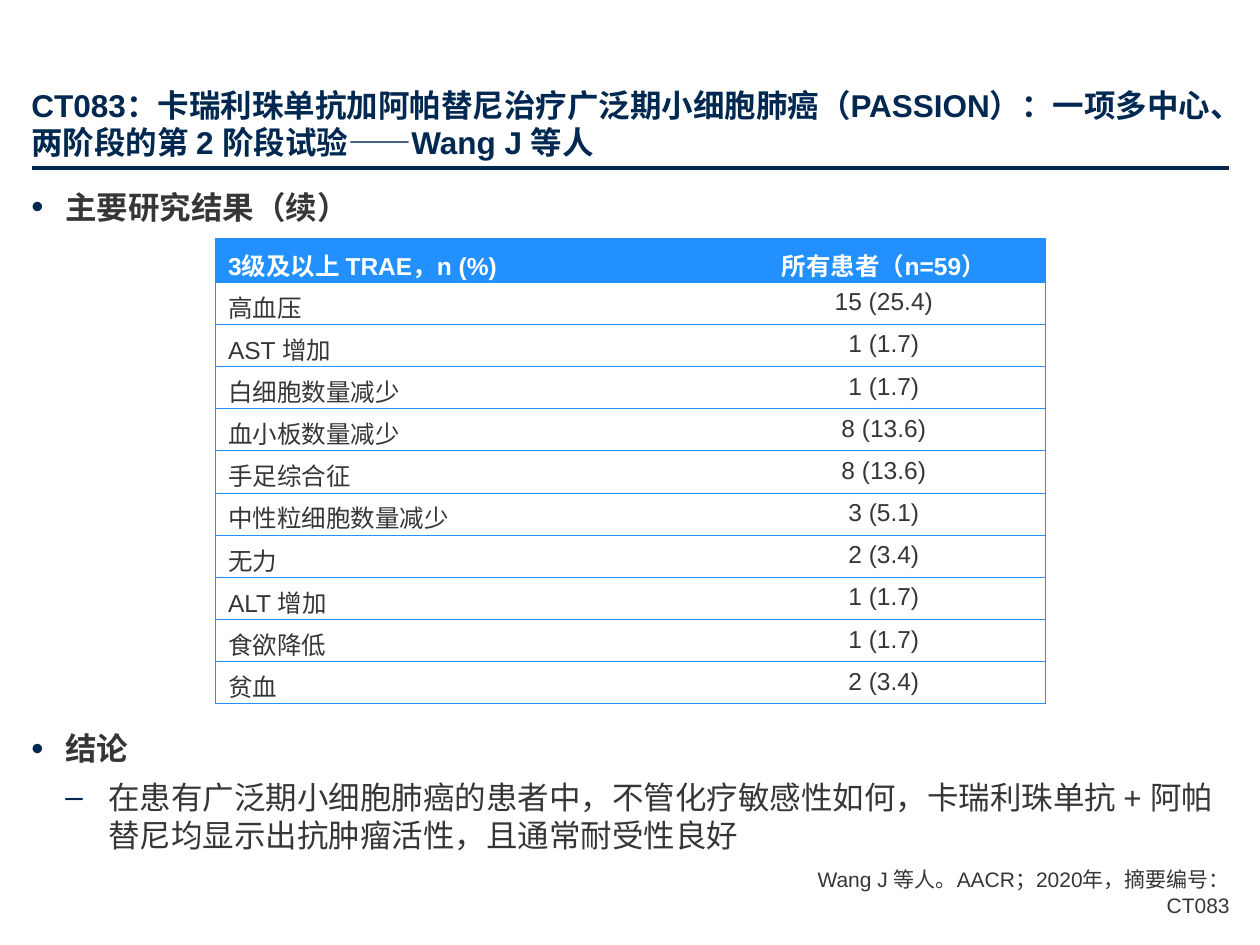
from lxml import etree
from pptx import Presentation
from pptx.dml.color import RGBColor
from pptx.enum.shapes import MSO_CONNECTOR
from pptx.enum.text import MSO_ANCHOR, PP_ALIGN
from pptx.oxml.ns import qn
from pptx.util import Inches, Pt

TOP, BOTTOM = MSO_ANCHOR.TOP, MSO_ANCHOR.BOTTOM
LEFT, CENTER, RIGHT = PP_ALIGN.LEFT, PP_ALIGN.CENTER, PP_ALIGN.RIGHT
LINE = MSO_CONNECTOR.STRAIGHT

NAVY, GREY, BLUE, WHITE = "002850", "363636", "2291FF", "FFFFFF"
FONT = "Arial"

HEADS = ("3级及以上 TRAE，n (%)", "所有患者（n=59）")
EVENTS = [
    ("高血压", "15 (25.4)"),
    ("AST 增加", "1 (1.7)"),
    ("白细胞数量减少", "1 (1.7)"),
    ("血小板数量减少", "8 (13.6)"),
    ("手足综合征", "8 (13.6)"),
    ("中性粒细胞数量减少", "3 (5.1)"),
    ("无力", "2 (3.4)"),
    ("ALT 增加", "1 (1.7)"),
    ("食欲降低", "1 (1.7)"),
    ("贫血", "2 (3.4)"),
]


def color(code):
    return RGBColor.from_string(code)


def node(root, tag, **attrs):
    return etree.SubElement(root, qn(tag), **attrs)


def write(para, text, size=18, ink=GREY, bold=False, align=LEFT, before=0, after=0):
    para.alignment = align
    para.space_before, para.space_after = Pt(before), Pt(after)
    run = para.add_run()
    run.text = text
    font = run.font
    font.name, font.size, font.bold = FONT, Pt(size), bold
    font.color.rgb = color(ink)


def bullet(para, mark, left, hang, scale=100):
    props = para._p.get_or_add_pPr()
    props.set("marL", str(Inches(left)))
    props.set("indent", str(-Inches(hang)))
    node(node(props, "a:buClr"), "a:srgbClr", val=NAVY)
    node(props, "a:buSzPct", val=str(scale * 1000))
    node(props, "a:buFont", typeface=FONT)
    node(props, "a:buChar", char=mark)


def edge(cell, side, ink=None):
    line = node(cell._tc.get_or_add_tcPr(), f"a:ln{side}", w=str(Pt(0.75)))
    if ink:
        node(node(line, "a:solidFill"), "a:srgbClr", val=ink)
    else:
        node(line, "a:noFill")


class Deck:
    def __init__(self):
        self.show = Presentation()
        self.show.slide_width, self.show.slide_height = Inches(10), Inches(7.5)
        self.slide = self.show.slides.add_slide(self.show.slide_layouts[6])

    def rule(self, x, y, end, ink, width):
        line = self.slide.shapes.add_connector(
            LINE, Inches(x), Inches(y), Inches(end), Inches(y))
        line.line.color.rgb = color(ink)
        line.line.width = Pt(width)
        node(line._element.spPr, "a:effectLst")

    def box(self, x, y, width, height, anchor=TOP, top=0, bottom=0):
        box = self.slide.shapes.add_textbox(
            Inches(x), Inches(y), Inches(width), Inches(height))
        frame = box.text_frame
        frame.word_wrap = True
        frame.vertical_anchor = anchor
        frame.margin_left = frame.margin_right = 0
        frame.margin_top, frame.margin_bottom = Inches(top), Inches(bottom)
        return frame

    def table(self, x, y, cols, heads, data, head=0.35, step=0.335):
        rows = [heads, *data]
        grid = self.slide.shapes.add_table(
            len(rows), len(cols), Inches(x), Inches(y),
            Inches(sum(cols)), Inches(head + step * len(data))).table
        for col, width in zip(grid.columns, cols):
            col.width = Inches(width)
        for i, row in enumerate(rows):
            grid.rows[i].height = Inches(step if i else head)
            for j, text in enumerate(row):
                self.cell(grid.cell(i, j), text, i == 0, j == 0)

    def cell(self, cell, text, head, first):
        cell.vertical_anchor = BOTTOM if head else TOP
        cell.margin_top, cell.margin_bottom = Inches(0.05), 0
        write(cell.text_frame.paragraphs[0], text, size=14, bold=head,
              ink=WHITE if head else GREY, align=LEFT if first else CENTER)
        edge(cell, "L", BLUE if first else None)
        edge(cell, "R", None if first else BLUE)
        edge(cell, "T", BLUE)
        edge(cell, "B", BLUE)
        if head:
            cell.fill.solid()
            cell.fill.fore_color.rgb = color(BLUE)
        else:
            cell.fill.background()


def main():
    deck = Deck()
    deck.rule(0.25, 1.33, 9.75, NAVY, 2.25)

    title = deck.box(0.25, 0.25, 9.5, 1.03, anchor=BOTTOM, top=0.05)
    write(title.paragraphs[0],
          "CT083：卡瑞利珠单抗加阿帕替尼治疗广泛期小细胞肺癌（PASSION）："
          "一项多中心、两阶段的第 2 阶段试验——Wang J 等人",
          ink=NAVY, bold=True)

    body = deck.box(0.25, 1.44, 9.5, 5.81, top=0.05, bottom=0.05)
    para = body.paragraphs[0]
    write(para, "主要研究结果（续）", bold=True, after=6)
    bullet(para, "•", 0.27, 0.27, 110)
    para = body.add_paragraph()
    write(para, "结论", bold=True, before=282, after=6)
    bullet(para, "•", 0.27, 0.27, 110)
    para = body.add_paragraph()
    write(para,
          "在患有广泛期小细胞肺癌的患者中，不管化疗敏感性如何，"
          "卡瑞利珠单抗 + 阿帕替尼均显示出抗肿瘤活性，且通常耐受性良好",
          after=6)
    bullet(para, "–", 0.61, 0.34)

    cite = deck.box(6.32, 7.08, 3.44, 0.2, anchor=BOTTOM)
    write(cite.paragraphs[0], "Wang J 等人。AACR；2020年，摘要编号：CT083",
          size=12, align=RIGHT)

    deck.table(1.71, 1.89, (4.02, 2.57), HEADS, EVENTS)
    deck.show.save("out.pptx")


if __name__ == "__main__":
    main()
